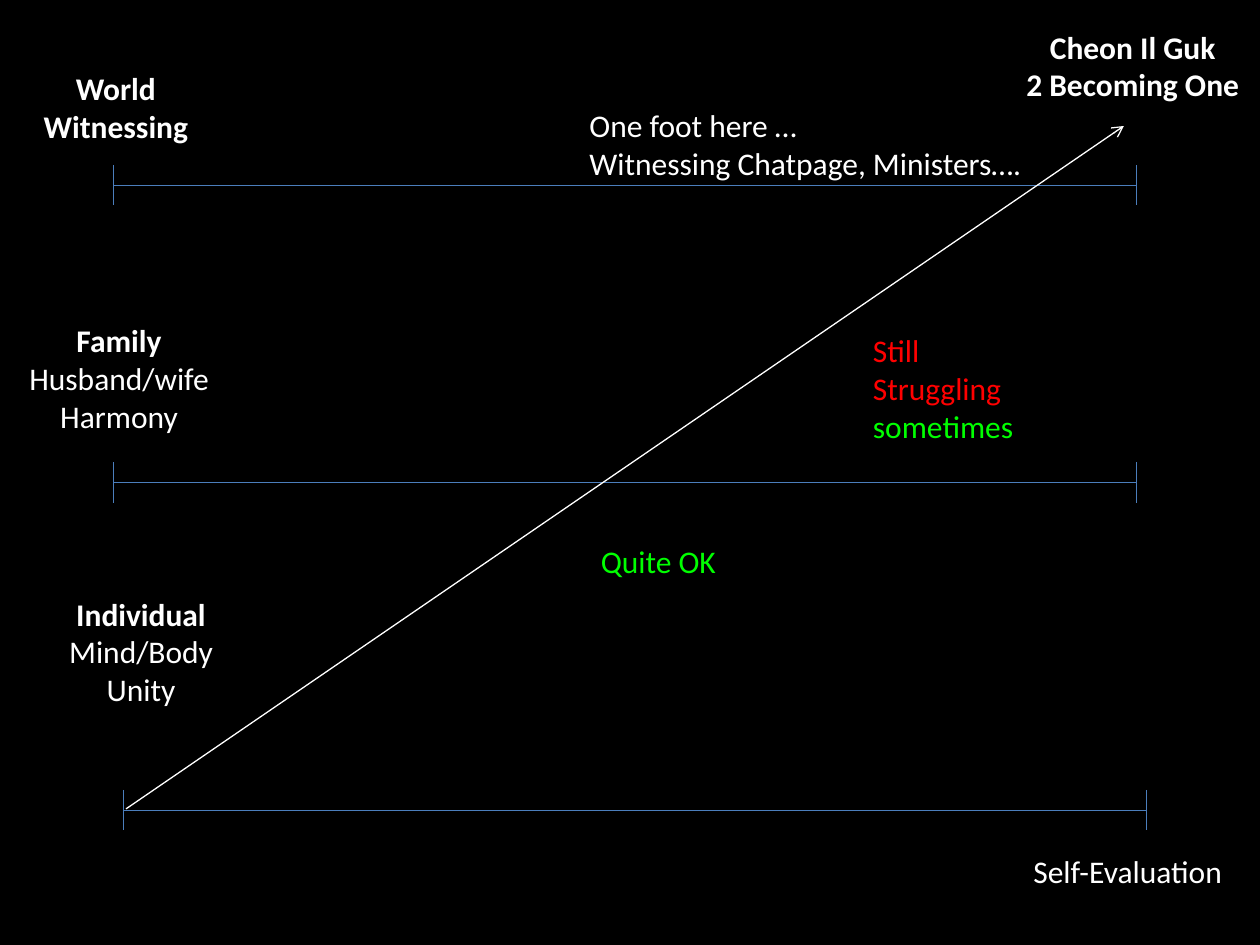
import pptx
import pptx.util
import pptx.dml.color
import pptx.enum.shapes
import pptx.enum.text
import pptx.oxml.ns
import lxml.etree

RGB = pptx.dml.color.RGBColor
BLACK = RGB(0x00, 0x00, 0x00)
WHITE = RGB(0xFF, 0xFF, 0xFF)
BLUE = RGB(0x4B, 0x7E, 0xBC)
RED = RGB(0xFF, 0x00, 0x00)
GREEN = RGB(0x00, 0xFF, 0x00)

CENTER = pptx.enum.text.PP_ALIGN.CENTER
LEFT = pptx.enum.text.PP_ALIGN.LEFT


class Deck:
    """Style and current slide; lengths are cells of a 100 x 75 grid."""
    font, size, weight = "Calibri", 18, 0.75
    columns, rows = 100, 75

    def __init__(self):
        self.prs = pptx.Presentation()
        self.prs.slide_width = pptx.util.Inches(10)
        self.prs.slide_height = pptx.util.Inches(7.5)
        self.s = self.prs.slides.add_slide(self.prs.slide_layouts[6])
        fill = self.s.background.fill
        fill.solid()
        fill.fore_color.rgb = BLACK

    def x(self, columns):
        return round(self.prs.slide_width * columns / self.columns)

    def y(self, rows):
        return round(self.prs.slide_height * rows / self.rows)

    def line(self, x1, y1, x2, y2, color=BLUE, arrow=False):
        sp = self.s.shapes.add_connector(
            pptx.enum.shapes.MSO_CONNECTOR.STRAIGHT,
            self.x(x1), self.y(y1), self.x(x2), self.y(y2))
        sp.line.color.rgb = color
        sp.line.width = pptx.util.Pt(self.weight)
        qn = pptx.oxml.ns.qn
        if arrow:
            ln = sp.line._get_or_add_ln()
            lxml.etree.SubElement(ln, qn("a:tailEnd"), type="arrow")
        lxml.etree.SubElement(sp._element.spPr, qn("a:effectLst"))

    def scale(self, left, row, length=81.2, tick=3.2):
        """A horizontal axis with a tick at each end."""
        right = left + length
        self.line(left, row, right, row)
        for x in (left, right):
            self.line(x, row - tick / 2, x, row + tick / 2)

    def text(self, left, top, width, height, paragraphs, align=LEFT):
        """Each paragraph is a list of lines: (text, colour, bold)."""
        sp = self.s.shapes.add_textbox(
            self.x(left), self.y(top), self.x(width), self.y(height))
        tf = sp.text_frame
        tf.word_wrap = False
        tf.auto_size = pptx.enum.text.MSO_AUTO_SIZE.SHAPE_TO_FIT_TEXT
        for i, lines in enumerate(paragraphs):
            p = tf.add_paragraph() if i else tf.paragraphs[0]
            p.alignment = align
            p.font.size = pptx.util.Pt(self.size)
            for j, (words, color, bold) in enumerate(lines):
                if j:
                    p.add_line_break()
                r = p.add_run()
                r.text = words
                r.font.name = self.font
                r.font.size = pptx.util.Pt(self.size)
                r.font.bold = bold
                r.font.color.rgb = color


def line_of(words, color=WHITE, bold=False):
    return words, color, bold


def head(words):
    return line_of(words, bold=True)


def main():
    d = Deck()

    # Scales for world, family and individual
    for left, row in ((9, 14.7), (9, 38.3), (9.8, 64.3)):
        d.scale(left, row)

    # Goal and the path towards it
    d.text(80.4, 1.7, 19, 7.1,
           [[head("Cheon Il Guk")], [head("2 Becoming One")]], CENTER)
    d.line(10, 64.2, 89.2, 10, WHITE, arrow=True)

    # Level labels
    d.text(4.4, 46.7, 13.6, 10.1,
           [[head("Individual"), line_of("Mind/Body")], [line_of("Unity")]],
           CENTER)
    d.text(1.2, 25, 16.5, 10.1,
           [[head("Family"), line_of("Husband/wife"), line_of("Harmony")]],
           CENTER)
    d.text(2.4, 5, 13.6, 7.1, [[head("World"), head("Witnessing")]], CENTER)

    # Self-evaluation remarks
    d.text(46.7, 42.5, 11.3, 4, [[line_of("Quite OK", GREEN)]])
    d.text(68.3, 25.8, 13.3, 10.1,
           [[line_of("Still", RED), line_of("Struggling", RED)],
            [line_of("sometimes", GREEN)]])
    d.text(45.8, 7.9, 37.8, 7.1,
           [[line_of("One foot here …"),
             line_of("Witnessing Chatpage, Ministers….")]])
    d.text(80.7, 67.1, 17.6, 4, [[line_of("Self-Evaluation")]], CENTER)

    d.prs.save("out.pptx")


if __name__ == "__main__":
    main()
